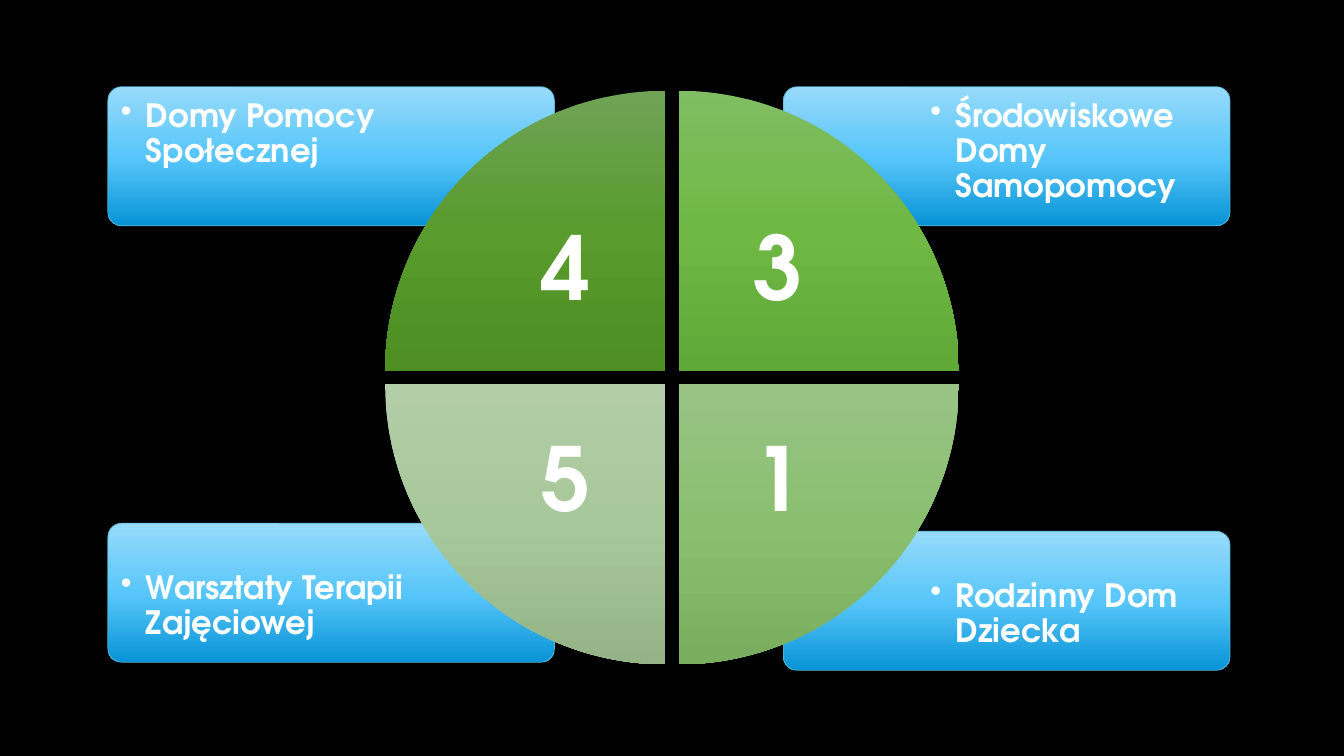
from copy import deepcopy

from pptx import Presentation
from pptx.dml.color import RGBColor
from pptx.enum.shapes import MSO_SHAPE
from pptx.enum.text import MSO_ANCHOR, PP_ALIGN
from pptx.oxml import parse_xml
from pptx.oxml.ns import nsdecls, qn
from pptx.util import Inches, Pt

BLACK = RGBColor(0x00, 0x00, 0x00)
WHITE = RGBColor(0xFF, 0xFF, 0xFF)
CARD_EDGE = RGBColor(0x57, 0xB7, 0xD1)
# Gradients run from the top to the bottom
CARD_BLUES = [RGBColor(0x97, 0xDB, 0xFB), RGBColor(0x56, 0xC5, 0xF9), RGBColor(0x07, 0x93, 0xD6)]
DEEP_GREENS = [RGBColor(0x6F, 0xA3, 0x56), RGBColor(0x59, 0x9B, 0x2D), RGBColor(0x4E, 0x8E, 0x23)]
BRIGHT_GREENS = [RGBColor(0x80, 0xBD, 0x63), RGBColor(0x6E, 0xB8, 0x43), RGBColor(0x60, 0xA8, 0x37)]
SOFT_GREENS = [RGBColor(0x98, 0xC3, 0x85), RGBColor(0x8A, 0xBF, 0x70), RGBColor(0x79, 0xAE, 0x5F)]
PALE_GREENS = [RGBColor(0xB2, 0xCD, 0xA8), RGBColor(0xA7, 0xC8, 0x9A), RGBColor(0x94, 0xB4, 0x87)]

# Grid of the wheel and its cards, in inches
RADIUS, GAP = 2.78, 0.13
WHEEL_LEFT, WHEEL_TOP = 3.82, 0.9
NUMBER_SIZE, NUMBER_INSET = 1.97, 0.49
CARD_WIDTH, CARD_HEIGHT = 4.43, 1.38
CARD_LEFTS = [1.07, 7.77]
CAPTION_WIDTH, CAPTION_HEIGHT, CAPTION_INSET = 3.04, 0.97, 0.1
CARD_PAD = 0.03

# column, row, card top, caption, number, wedge rotation, wedge colours
QUARTERS = [
    (1, 1, 5.27, "Rodzinny Dom Dziecka", "1", 180, SOFT_GREENS),
    (0, 1, 5.19, "Warsztaty Terapii Zajęciowej", "5", 270, PALE_GREENS),
    (1, 0, 0.86, "Środowiskowe Domy Samopomocy", "3", 90, BRIGHT_GREENS),
    (0, 0, 0.86, "Domy Pomocy Społecznej", "4", 0, DEEP_GREENS),
]

prs = Presentation()
prs.slide_width, prs.slide_height = Inches(13.33), Inches(7.5)
slide = prs.slides.add_slide(prs.slide_layouts[6])
slide.background.fill.solid()
slide.background.fill.fore_color.rgb = BLACK


def add_shaded(preset, left, top, width, height, colours, middle):
    shape = slide.shapes.add_shape(preset, Inches(left), Inches(top), Inches(width), Inches(height))
    shape.shadow.inherit = False
    shape.fill.gradient()
    shape.fill.gradient_angle = 270
    # A third stop, and shading that stays upright when the shape turns
    gradient = shape._element.spPr.find(qn("a:gradFill"))
    gradient.set("rotWithShape", "0")
    stops = gradient.find(qn("a:gsLst"))
    stops.insert(1, deepcopy(stops[0]))
    for stop, colour, position in zip(shape.fill.gradient_stops, colours, (0, middle, 1)):
        stop.color.rgb = colour
        stop.position = position
    return shape


def add_label(text, left, top, width, height, inset, size, bulleted):
    label = slide.shapes.add_textbox(Inches(left), Inches(top), Inches(width), Inches(height))
    frame = label.text_frame
    frame.word_wrap = True
    for side in ("left", "top", "right", "bottom"):
        setattr(frame, f"margin_{side}", Inches(inset))
    paragraph = frame.paragraphs[0]
    paragraph.line_spacing = 0.9
    if bulleted:
        paragraph.level = 1
        properties = paragraph._p.get_or_add_pPr()
        properties.set("marL", str(Inches(0.25)))
        properties.set("indent", str(Inches(-0.25)))
        properties.append(parse_xml(f'<a:buChar {nsdecls("a")} char="•"/>'))
    else:
        frame.vertical_anchor = MSO_ANCHOR.MIDDLE
        paragraph.alignment = PP_ALIGN.CENTER
    run = paragraph.add_run()
    run.text = text
    for key, value in {"name": "TeX Gyre Adventor", "size": Pt(size), "bold": True}.items():
        setattr(run.font, key, value)
    run.font.color.rgb = WHITE


# Cards with captions, behind the wheel
for column, row, top, caption, *_ in QUARTERS:
    left = CARD_LEFTS[column]
    card = add_shaded(MSO_SHAPE.ROUNDED_RECTANGLE, left, top, CARD_WIDTH, CARD_HEIGHT, CARD_BLUES, 0.52)
    card.adjustments[0] = 0.1
    card.line.color.rgb = CARD_EDGE
    card.line.width = Pt(0.5)
    # Each caption sits in the outer corner of its card
    caption_left = left + CARD_PAD + column * (CARD_WIDTH - CAPTION_WIDTH - 2 * CARD_PAD)
    caption_top = top + CARD_PAD + row * (CARD_HEIGHT - CAPTION_HEIGHT - 2 * CARD_PAD)
    add_label(caption, caption_left, caption_top, CAPTION_WIDTH, CAPTION_HEIGHT,
              CAPTION_INSET, 23, True)

# Wheel of four numbered wedges
for column, row, _, _, number, rotation, greens in reversed(QUARTERS):
    left = WHEEL_LEFT + column * (RADIUS + GAP)
    top = WHEEL_TOP + row * (RADIUS + GAP)
    wedge = add_shaded(MSO_SHAPE.PIE_WEDGE, left, top, RADIUS, RADIUS, greens, 0.5)
    wedge.rotation = rotation
    wedge.line.fill.background()
    # Each number sits in the corner nearest the hub
    add_label(number, left + (1 - column) * (RADIUS - NUMBER_SIZE),
              top + (1 - row) * (RADIUS - NUMBER_SIZE),
              NUMBER_SIZE, NUMBER_SIZE, NUMBER_INSET, 63, False)

prs.save("out.pptx")
